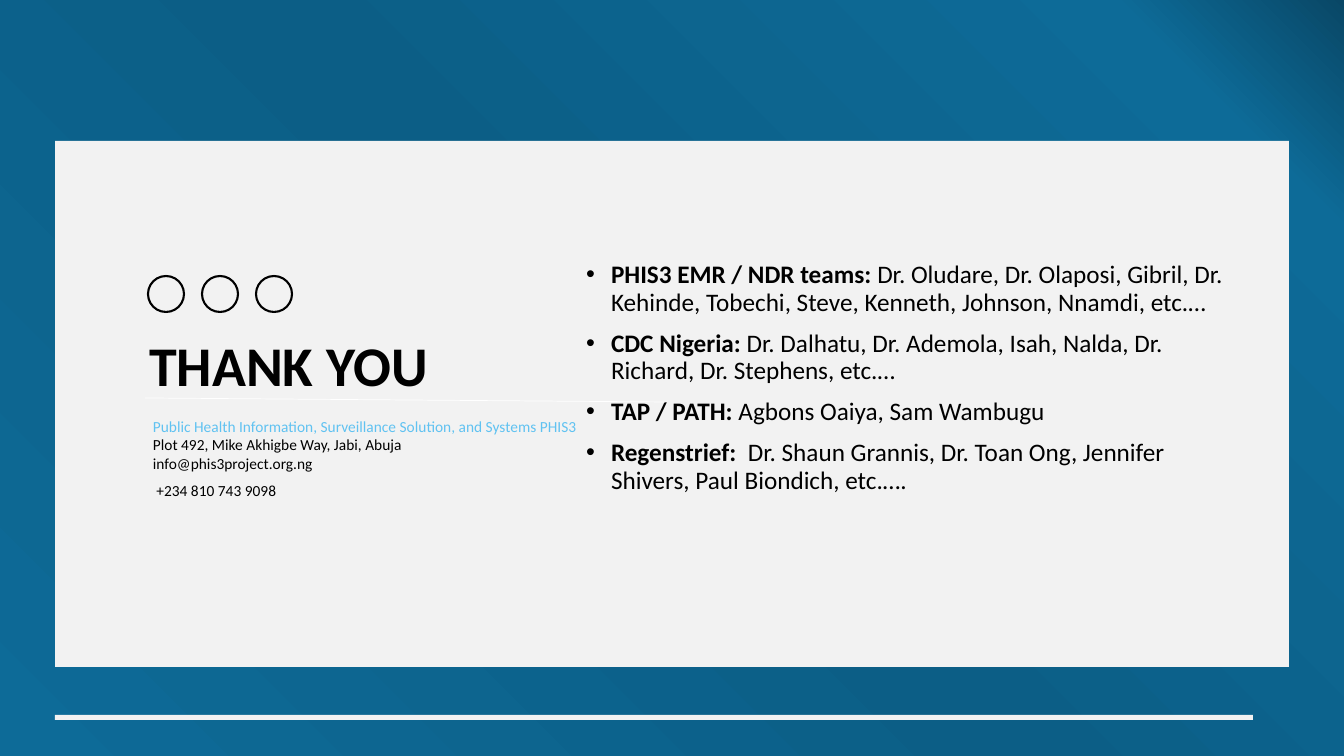
from lxml import etree
from pptx import Presentation, util as u
from pptx.dml.color import RGBColor
from pptx.enum import shapes, text
from pptx.oxml import parse_xml
from pptx.oxml.ns import nsdecls, qn

PX = u.Inches(13.3333) / 1344
BLACK = RGBColor(0, 0, 0)
WHITE = RGBColor(0xFF, 0xFF, 0xFF)
PALE_GREY = RGBColor(0xF2, 0xF2, 0xF2)
SKY_BLUE = RGBColor(0x60, 0xC2, 0xF1)
GRADIENT_STOPS = [(0, "0D6B98"), (49, "0C5E86"), (89, "0D6B98"), (100, "094766")]

THANKED_TEAMS = [
    ("PHIS3 EMR / NDR teams: ",
     "Dr. Oludare, Dr. Olaposi, Gibril, Dr. Kehinde, Tobechi, Steve, Kenneth, Johnson, Nnamdi, etc.…"),
    ("CDC Nigeria: ",
     "Dr. Dalhatu, Dr. Ademola, Isah, Nalda, Dr. Richard, Dr. Stephens, etc.…"),
    ("TAP / PATH: ", "Agbons Oaiya, Sam Wambugu"),
    ("Regenstrief:  ",
     "Dr. Shaun Grannis, Dr. Toan Ong, Jennifer Shivers, Paul Biondich, etc.…."),
]
CONTACT_LINES = [
    "Public Health Information, Surveillance Solution, and Systems PHIS3",
    "Plot 492, Mike Akhigbe Way, Jabi, Abuja",
    "info@phis3project.org.ng",
    " +234 810 743 9098",
]


def px(*lengths):
    """Turn pixel lengths into EMU."""
    return [u.Emu(round(length * PX)) for length in lengths]


def style(font, size, color, bold=False):
    font.name = "Calibri"
    font.size = u.Pt(size)
    font.bold = bold
    font.color.rgb = color


prs = Presentation()
prs.slide_width, prs.slide_height = px(1344, 756)
slide = prs.slides.add_slide(prs.slide_layouts[1])
title, teams = slide.placeholders

# Backdrop, panel and footer bar
backdrop, panel, footer_bar = [
    slide.shapes.add_shape(shapes.MSO_SHAPE.RECTANGLE, *px(*box))
    for box in [(0, 0, 1344, 756), (55, 141, 1234, 526), (55, 715, 1198, 5)]
]
for block in (backdrop, panel, footer_bar):
    block.shadow.inherit = False
    block.line.fill.background()
    block.fill.solid()
    block.fill.fore_color.rgb = PALE_GREY

stops = "".join(
    f'<a:gs pos="{pos * 1000}"><a:srgbClr val="{color}"/></a:gs>'
    for pos, color in GRADIENT_STOPS
)
radial = parse_xml(
    f'<a:gradFill {nsdecls("a")} rotWithShape="1"><a:gsLst>{stops}</a:gsLst>'
    '<a:path path="circle"><a:fillToRect t="100000" r="100000"/></a:path></a:gradFill>'
)
backdrop_pr = backdrop._element.spPr
backdrop_pr.replace(backdrop_pr.find(qn("a:solidFill")), radial)

# Title, brought in front of the panel
slide.shapes._spTree.append(title._element)
title.left, title.top, title.width, title.height = px(15, 302, 547, 102)
title.text_frame.text = "THANK YOU"
title.text_frame.auto_size = text.MSO_AUTO_SIZE.NONE
title.text_frame.vertical_anchor = text.MSO_ANCHOR.BOTTOM
heading = title.text_frame.paragraphs[0]
heading.alignment = text.PP_ALIGN.CENTER
heading.line_spacing = 0.9
style(heading.runs[0].font, 40, BLACK, bold=True)

divider = slide.shapes.add_connector(
    shapes.MSO_CONNECTOR.STRAIGHT, *px(145, 398, 664, 402))
divider.line.color.rgb = WHITE
divider.line.width = u.Pt(0.5)
etree.SubElement(divider._element.spPr, qn("a:effectLst"))

# Social media markers
for i in range(3):
    marker = slide.shapes.add_shape(
        shapes.MSO_SHAPE.OVAL, *px(148 + 54 * i, 276, 36, 36))
    marker.shadow.inherit = False
    marker.fill.background()
    marker.line.color.rgb = BLACK
    marker.line.width = u.Pt(1.5)

# Contact details
contact = slide.shapes.add_textbox(*px(143, 412, 538, 94)).text_frame
contact.word_wrap = True
contact.text = "\n".join(CONTACT_LINES)
for paragraph in contact.paragraphs:
    style(paragraph.runs[0].font, 11, BLACK)
contact.paragraphs[0].runs[0].font.color.rgb = SKY_BLUE
contact.paragraphs[-1].space_before = u.Pt(6)

# Thanked teams
slide.shapes._spTree.append(teams._element)
teams.left, teams.top, teams.width, teams.height = px(573, 255, 686, 286)
thanks = teams.text_frame
thanks.auto_size = text.MSO_AUTO_SIZE.NONE
thanks.margin_left, thanks.margin_right = px(13, 13)
thanks.margin_top, thanks.margin_bottom = px(7, 7)
hanging = px(25)[0]
for i, (team, people) in enumerate(THANKED_TEAMS):
    paragraph = thanks.add_paragraph() if i else thanks.paragraphs[0]
    paragraph.line_spacing = 0.9
    paragraph.space_before = u.Pt(10 if i else 0)
    properties = paragraph._p.get_or_add_pPr()
    properties.set("marL", str(hanging))
    properties.set("indent", str(-hanging))
    for words, bold in [(team, True), (people, False)]:
        run = paragraph.add_run()
        run.text = words
        style(run.font, 18, BLACK, bold)

prs.save("out.pptx")
